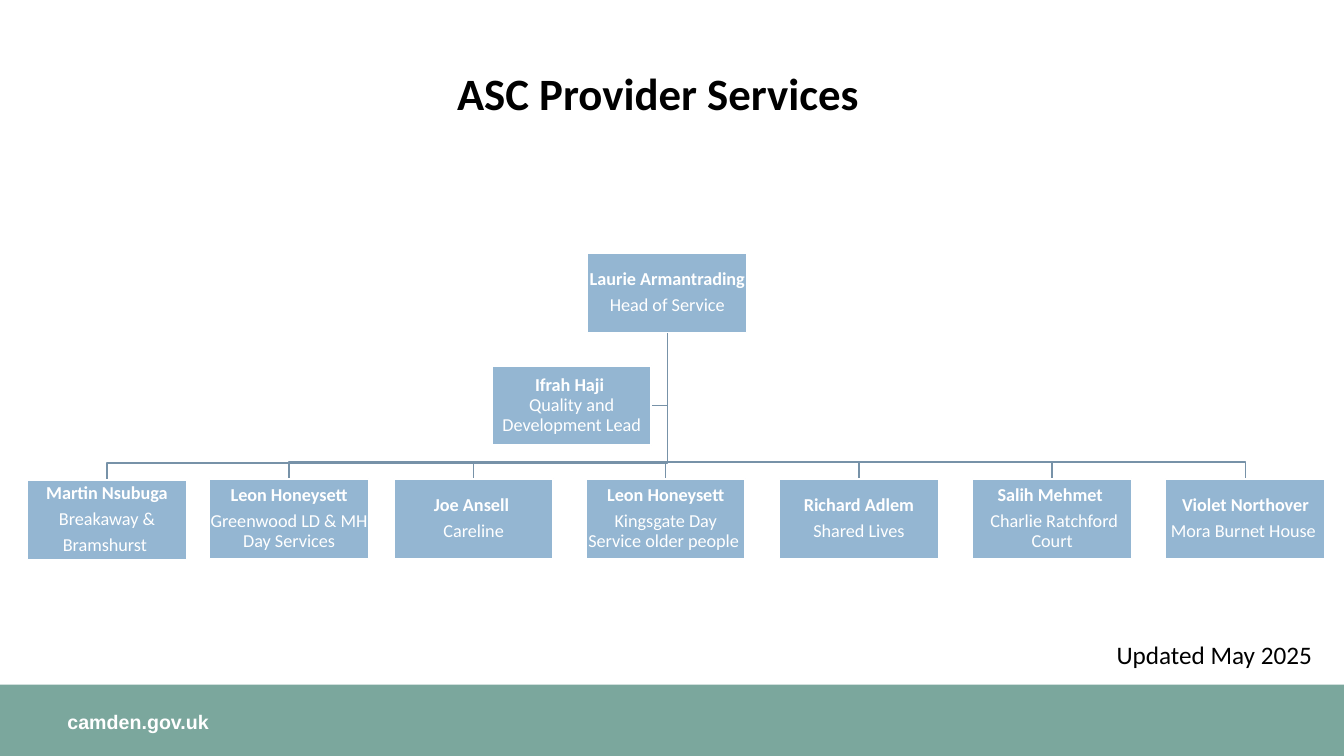
from pptx import Presentation
from pptx.dml.color import RGBColor
from pptx.enum.shapes import MSO_SHAPE
from pptx.enum.text import MSO_ANCHOR, MSO_AUTO_SIZE, PP_ALIGN
from pptx.util import Cm, Pt

RECT = MSO_SHAPE.RECTANGLE
LEFT, MID = PP_ALIGN.LEFT, PP_ALIGN.CENTER
TOP, CENTRE = MSO_ANCHOR.TOP, MSO_ANCHOR.MIDDLE
FIXED = MSO_AUTO_SIZE.NONE

COLOURS = {"band": "7BA79D", "box": "94B6D2", "line": "7792A8",
           "white": "FFFFFF", "black": "000000"}
WIDE, HIGH = 33.87, 19.05
BOX_W, BOX_H = 4.01, 2.0

# Head, assistant and team: left, top, paragraphs
HEAD = (14.81, 6.38, ["Laurie Armantrading", "Head of Service"])
AIDE = (12.4, 9.22, ["Ifrah Haji \vQuality and Development Lead"])
TEAM = [
    (0.69, 12.1, ["Martin Nsubuga", "Breakaway &", "Bramshurst "]),
    (5.28, 12.07, ["Leon Honeysett", "Greenwood LD & MH Day Services"]),
    (9.93, 12.07, ["Joe Ansell ", "Careline"]),
    (14.77, 12.07, ["Leon Honeysett", "Kingsgate Day Service older people "]),
    (19.64, 12.07, ["Richard Adlem", "Shared Lives"]),
    (24.51, 12.07, ["Salih Mehmet ", " Charlie Ratchford Court"]),
    (29.38, 12.07, ["Violet Northover", "Mora Burnet House "]),
]


def colour(name):
    return RGBColor.from_string(COLOURS[name])


def apply(item, values):
    for key, value in values.items():
        setattr(item, key, value)


class Deck:
    def __init__(self):
        self.show = Presentation()
        apply(self.show, {"slide_width": Cm(WIDE), "slide_height": Cm(HIGH)})
        self.slide = self.show.slides.add_slide(self.show.slide_layouts[5])
        self.shapes = self.slide.shapes

    def style(self, run, size, tint, bold=False, face="Calibri"):
        apply(run.font, {"size": Pt(size), "bold": bold, "name": face})
        run.font.color.rgb = colour(tint)

    def frame(self, shape, pads, anchor, wrap=True):
        names = ("margin_left", "margin_top", "margin_right", "margin_bottom")
        apply(shape.text_frame, {"auto_size": FIXED, "word_wrap": wrap,
                                 "vertical_anchor": anchor})
        apply(shape.text_frame, {n: Cm(p) for n, p in zip(names, pads)})
        return shape.text_frame

    def title(self, text, *place):
        shape = self.shapes.title
        apply(shape, dict(zip(("left", "top", "width", "height"), map(Cm, place))))
        para = self.frame(shape, (0.25, 0.13, 0.25, 0.13), CENTRE).paragraphs[0]
        apply(para, {"alignment": MID, "line_spacing": 0.9})
        run = para.add_run()
        run.text = text
        self.style(run, 32, "black", True)

    def label(self, text, place, pads, wrap=True, **look):
        shape = self.shapes.add_textbox(*map(Cm, place))
        para = self.frame(shape, pads, TOP, wrap).paragraphs[0]
        para.alignment = LEFT
        run = para.add_run()
        run.text = text
        self.style(run, **look)

    def rect(self, place, fill, edge=None):
        shape = self.shapes.add_shape(RECT, *map(Cm, place))
        shape.shadow.inherit = False
        shape.fill.solid()
        shape.fill.fore_color.rgb = colour(fill)
        if edge:
            shape.line.color.rgb = colour(edge)
            shape.line.width = Pt(1)
        else:
            shape.line.fill.background()
        return shape

    def post(self, left, top, lines):
        shape = self.rect((left, top, BOX_W, BOX_H), "box", "white")
        frame = self.frame(shape, (0.02,) * 4, CENTRE)
        bold = True
        for i, line in enumerate(lines):
            para = frame.add_paragraph() if i else frame.paragraphs[0]
            apply(para, {"alignment": MID, "line_spacing": 0.9,
                         "space_after": Pt(4.5)})
            for j, part in enumerate(line.split("\v")):
                if j:
                    para.add_line_break()
                run = para.add_run()
                run.text = part
                self.style(run, 13, "white", bold)
                bold = False

    def route(self, *points):
        start, *rest = [(Cm(x), Cm(y)) for x, y in points]
        pen = self.shapes.build_freeform(*start)
        pen.add_line_segments(rest, close=False)
        shape = pen.convert_to_shape()
        shape.shadow.inherit = False
        shape.fill.background()
        shape.line.color.rgb = colour("line")
        shape.line.width = Pt(1)


def main():
    deck = Deck()

    # Footer band
    deck.rect((0, 17.25, WIDE, 1.8), "band")
    deck.label("camden.gov.uk", (1.7, 17.88, 13.94, 0.61), (0, 0, 0.25, 0),
               size=14, tint="white", bold=True, face="Arial")

    # Title and date
    deck.title("ASC Provider Services", 1.98, 0.58, 29.21, 3.68)
    deck.label("Updated May 2025", (27.89, 15.98, 5.49, 1.02),
               (0.25, 0.13, 0.25, 0.13), False, size=18, tint="black")

    # Lines from the head to each post
    stem, base = HEAD[0] + BOX_W / 2, HEAD[1] + BOX_H
    side = AIDE[1] + BOX_H / 2
    deck.route((stem, base), (stem, side), (AIDE[0] + BOX_W, side))
    for left, top, _ in TEAM:
        x, bend = left + BOX_W / 2, top - 0.43
        deck.route((stem, base), (stem, bend), (x, bend), (x, top))

    # Posts
    for entry in [HEAD, *TEAM, AIDE]:
        deck.post(*entry)

    deck.show.save("out.pptx")


if __name__ == "__main__":
    main()
